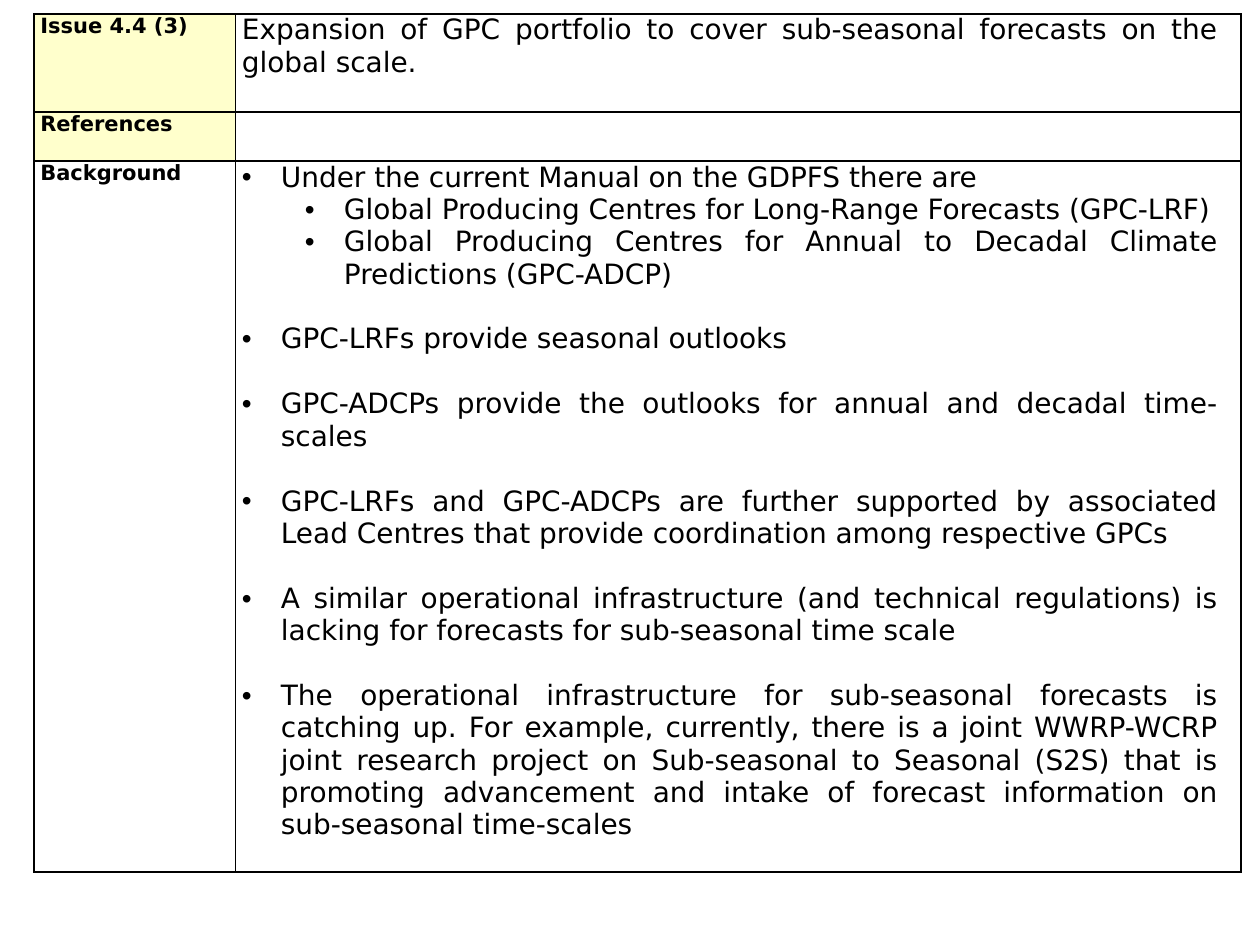
from dataclasses import dataclass

from lxml.etree import SubElement as Sub
from pptx import Presentation
from pptx.dml.color import RGBColor as Rgb
from pptx.enum.text import PP_ALIGN as Align
from pptx.oxml.ns import qn
from pptx.util import Inches, Pt


@dataclass(frozen=True)
class Theme:
    """Hold the colours, font and sizes of the slide."""
    font: str = "DejaVu Sans"
    ink: str = "000000"
    label: str = "FFFFCC"
    paper: str = "FFFFFF"
    small: int = 12
    body: int = 16
    gap: float = 18.6
    line: int = 1


THEME = Theme()
WIDE, HIGH = 10, 7.5
LEFT, TOP = 0.27, 0.11
COLS = (1.6, 7.98)
ROWS = (0.78, 0.39, 5.64)
PAD, EDGE = 0.05, 0.18
HANG, STEP = 0.31, 0.5

ISSUE = "Expansion of GPC portfolio to cover sub-seasonal forecasts on the global scale."
POINTS = (
    (0, "Under the current Manual on the GDPFS there are"),
    (1, "Global Producing Centres for Long-Range Forecasts (GPC-LRF)"),
    (1, "Global Producing Centres for Annual to Decadal Climate Predictions (GPC-ADCP)"),
    (0, "GPC-LRFs provide seasonal outlooks"),
    (0, "GPC-ADCPs provide the outlooks for annual and decadal time-scales"),
    (0, "GPC-LRFs and GPC-ADCPs are further supported by associated Lead Centres "
        "that provide coordination among respective GPCs"),
    (0, "A similar operational infrastructure (and technical regulations) is lacking "
        "for forecasts for sub-seasonal time scale"),
    (0, "The operational infrastructure for sub-seasonal forecasts is catching up. "
        "For example, currently, there is a joint WWRP-WCRP joint research project on "
        "Sub-seasonal to Seasonal (S2S) that is promoting advancement and intake of "
        "forecast information on sub-seasonal time-scales"),
)


def write(para, text, size=THEME.body, bold=False, align=Align.JUSTIFY, gap=0):
    """Put formatted text into a paragraph."""
    para.alignment = align
    para.space_before = Pt(gap)
    run = para.add_run()
    run.text = text
    font = run.font
    font.name, font.size, font.bold = THEME.font, Pt(size), bold
    font.color.rgb = Rgb.from_string(THEME.ink)


def bullet(para, level):
    """Give a paragraph a hanging bullet at its level."""
    para.level = level
    props = para._p.get_or_add_pPr()
    props.set("marL", str(Inches(HANG + level * STEP)))
    props.set("indent", str(Inches(-HANG)))
    Sub(props, qn("a:buFont"), typeface="Arial")
    Sub(props, qn("a:buChar"), char="•")


def points(cell, items):
    """List the items, with a line of space before each later main point."""
    frame = cell.text_frame
    for num, (level, text) in enumerate(items):
        para = frame.add_paragraph() if num else frame.paragraphs[0]
        bullet(para, level)
        write(para, text, gap=THEME.gap if num and not level else 0)


def style(cell, fill, right):
    """Set the margins, borders and fill of a cell."""
    cell.margin_left, cell.margin_right = Inches(PAD), Inches(right)
    cell.margin_top = cell.margin_bottom = 0
    props = cell._tc.get_or_add_tcPr()
    for side in "LRTB":
        line = Sub(props, qn(f"a:ln{side}"), w=str(Pt(THEME.line)))
        Sub(Sub(line, qn("a:solidFill")), qn("a:srgbClr"), val=THEME.ink)
    cell.fill.solid()
    cell.fill.fore_color.rgb = Rgb.from_string(fill)


def grid(slide):
    """Add the table with its columns and rows sized."""
    box = [Inches(n) for n in (LEFT, TOP, sum(COLS), sum(ROWS))]
    table = slide.shapes.add_table(len(ROWS), len(COLS), *box).table
    table.first_row = table.horz_banding = False
    for col, width in zip(table.columns, COLS):
        col.width = Inches(width)
    for row, height in zip(table.rows, ROWS):
        row.height = Inches(height)
    return table


def main():
    """Build and save the slide."""
    deck = Presentation()
    deck.slide_width, deck.slide_height = Inches(WIDE), Inches(HIGH)
    table = grid(deck.slides.add_slide(deck.slide_layouts[6]))
    labels = (("Issue 4.4 (3)", THEME.label), ("References", THEME.label),
              ("Background", THEME.paper))
    for row, (text, fill) in enumerate(labels):
        head = table.cell(row, 0)
        style(head, fill, PAD)
        style(table.cell(row, 1), THEME.paper, EDGE)
        write(head.text_frame.paragraphs[0], text, size=THEME.small,
              bold=True, align=Align.LEFT)
    write(table.cell(0, 1).text_frame.paragraphs[0], ISSUE)
    points(table.cell(2, 1), POINTS)
    deck.save("out.pptx")


if __name__ == "__main__":
    main()
